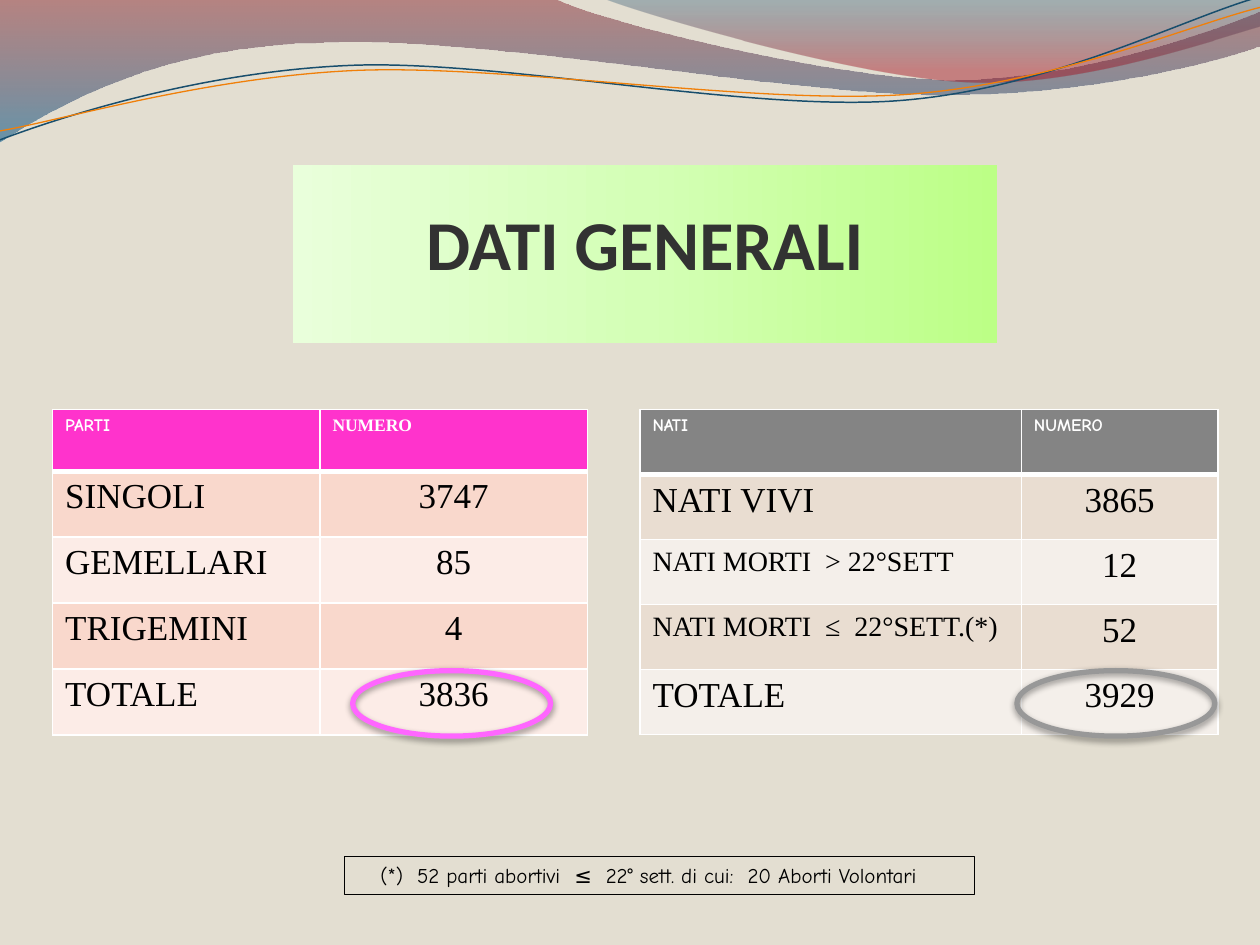
from math import cos, radians, sin

from lxml import etree
from pptx import Presentation
from pptx.dml.color import RGBColor
from pptx.enum.shapes import MSO_SHAPE
from pptx.enum.text import MSO_ANCHOR, PP_ALIGN
from pptx.oxml import parse_xml
from pptx.oxml.ns import nsdecls, qn
from pptx.util import Cm, Pt

RECT, OVAL = MSO_SHAPE.RECTANGLE, MSO_SHAPE.OVAL
BOTTOM, MIDDLE = MSO_ANCHOR.BOTTOM, MSO_ANCHOR.MIDDLE
LEFT, CENTER = PP_ALIGN.LEFT, PP_ALIGN.CENTER

SAND = RGBColor(0xE3, 0xDE, 0xD1)
WINE = RGBColor(0x7E, 0x16, 0x21)
BLUE = RGBColor(0x00, 0x56, 0x89)
NAVY = RGBColor(0x09, 0x44, 0x67)
RED = RGBColor(0xA1, 0x0F, 0x1F)
TEAL = RGBColor(0x18, 0x4E, 0x6D)
ORANGE = RGBColor(0xF0, 0x7F, 0x09)
LIME = RGBColor(0xBC, 0xFF, 0x86)
LIGHT_LIME = RGBColor(0xD4, 0xFF, 0xB6)
PALE_LIME = RGBColor(0xE9, 0xFF, 0xDB)
DARK = RGBColor(0x32, 0x32, 0x32)
BLACK = RGBColor(0x00, 0x00, 0x00)
WHITE = RGBColor(0xFF, 0xFF, 0xFF)
MAGENTA = RGBColor(0xFF, 0x33, 0xCC)
ROSE = RGBColor(0xF9, 0xD8, 0xCC)
PALE_ROSE = RGBColor(0xFC, 0xEC, 0xE7)
GREY = RGBColor(0x84, 0x84, 0x84)
BEIGE = RGBColor(0xE9, 0xDD, 0xD1)
PALE_BEIGE = RGBColor(0xF4, 0xEF, 0xEA)
PINK = RGBColor(0xFF, 0x66, 0xFF)
SILVER = RGBColor(0x98, 0x98, 0x98)

COMIC, TIMES = "Comic Neue", "Times New Roman"
TILT = 2.7


def set_gradient(sp, stops, angle):
    sp.fill.background()
    gs = "".join(
        f'<a:gs pos="{pos * 1000}"><a:srgbClr val="{color}">'
        f'<a:alpha val="{alpha * 1000}"/></a:srgbClr></a:gs>'
        for pos, color, alpha in stops)
    grad = parse_xml(
        f'<a:gradFill {nsdecls("a")} rotWithShape="1"><a:gsLst>{gs}</a:gsLst>'
        f'<a:lin ang="{angle * 60000}" scaled="0"/></a:gradFill>')
    no_fill = sp._element.spPr.find(qn("a:noFill"))
    sp._element.spPr.replace(no_fill, grad)


def set_font(r, name, size, color, bold=False):
    r.font.name = name
    r.font.size = Pt(size)
    r.font.color.rgb = color
    r.font.bold = bold


prs = Presentation()
prs.slide_width, prs.slide_height = Cm(25.4), Cm(19.05)
s = prs.slides.add_slide(prs.slide_layouts[6])
s.background.fill.solid()
s.background.fill.fore_color.rgb = SAND

waves = [
    ([(0, -0.03), (11.18, -0.03), (12.09, 0.43, 16.87, 1.6, 19.25, 1.6),
      (21.67, 1.6, 24.33, 0.66, 25.4, 0.23), (25.43, 0.91),
      (24.97, 1.12, 22.1, 1.93, 18.95, 1.91), (15.8, 1.91, 9.7, 0.71, 6.53, 0.86),
      (3.28, 0.89, 1.17, 2.11, -0.03, 2.87), (0, -0.03)],
     [(0, WINE, 45), (100, BLUE, 55)], None, 0, 0),
    ([(12.17, -0.03), (12.93, 0.28, 17.32, 1.57, 19.53, 1.65),
      (21.74, 1.75, 24.41, 0.81, 25.4, 0.53), (25.4, 0), (12.17, -0.03)],
     [(0, NAVY, 30), (80, RED, 45)], None, 0, 0),
    ([(0, 2.82), (1.22, 2.36, 4.01, 1.45, 7.04, 1.32),
      (10.03, 1.19, 15.06, 2.26, 18.11, 2.03), (21.16, 1.8, 23.83, 0.38, 25.35, -0.05)],
     None, TEAL, 0.85, 1.46),
    ([(0, 2.64), (1.19, 2.44, 4.17, 1.55, 7.19, 1.42),
      (10.24, 1.3, 15.16, 2.11, 18.21, 1.91), (21.23, 1.7, 23.9, 0.53, 25.4, 0.15)],
     None, ORANGE, 0.75, 1.5),
]
for segments, stops, color, width, mid_y in waves:
    angle = 0 if stops else radians(TILT)
    points = []
    for seg in segments:
        for x, y in zip(seg[::2], seg[1::2]):
            dx, dy = x - 12.69, y - mid_y
            points.append((Cm(12.69 + dx * cos(angle) - dy * sin(angle)),
                           Cm(mid_y + dx * sin(angle) + dy * cos(angle))))
    fb = s.shapes.build_freeform(*points[0])
    fb.add_line_segments(points[1:], close=stops is not None)
    sp = fb.convert_to_shape()
    lines = iter(list(sp._element.iter(qn("a:lnTo"))))
    for seg in segments[1:]:
        ln = next(lines)
        if len(seg) == 6:
            ln.tag = qn("a:cubicBezTo")
            for extra in (next(lines), next(lines)):
                ln.append(extra[0])
                extra.getparent().remove(extra)
    sp.shadow.inherit = False
    if stops:
        set_gradient(sp, stops, 90)
        sp.line.fill.background()
    else:
        sp.rotation = 360 - TILT
        sp.fill.background()
        sp.line.color.rgb = color
        sp.line.width = Pt(width)

sp = s.shapes.add_shape(RECT, Cm(5.9), Cm(3.33), Cm(14.2), Cm(3.59))
sp.shadow.inherit = False
set_gradient(sp, [(0, LIME, 100), (50, LIGHT_LIME, 100), (100, PALE_LIME, 100)], 180)
sp.line.fill.background()
tf = sp.text_frame
tf.word_wrap = True
tf.vertical_anchor = BOTTOM
tf.margin_left = tf.margin_right = 0
tf.margin_bottom = Cm(1.19)
tf.text = "DATI GENERALI"
p = tf.paragraphs[0]
p.alignment = CENTER
set_font(p.runs[0], "Calibri", 40, DARK, True)

tables = [
    (1.06, [5.39, 5.39], 1.25, 1.33, (COMIC, TIMES), (MAGENTA, ROSE, PALE_ROSE),
     [("PARTI", "NUMERO"), ("SINGOLI", "3747"), ("GEMELLARI", "85"),
      ("TRIGEMINI", "4"), ("TOTALE", "3836")]),
    (12.9, [7.69, 3.96], 1.32, 1.31, (COMIC, COMIC), (GREY, BEIGE, PALE_BEIGE),
     [("NATI", "NUMERO"), ("NATI VIVI", "3865"), ("NATI MORTI  > 22°SETT", "12"),
      ("NATI MORTI  ≤  22°SETT.(*)", "52"), ("TOTALE", "3929")]),
]
for left, widths, head_height, row_height, head_fonts, fills, rows in tables:
    height = head_height + 4 * row_height
    tbl = s.shapes.add_table(5, 2, Cm(left), Cm(8.25), Cm(sum(widths)), Cm(height)).table
    for j, width in enumerate(widths):
        tbl.columns[j].width = Cm(width)
    for i, row in enumerate(rows):
        tbl.rows[i].height = Cm(row_height if i else head_height)
        for j, text in enumerate(row):
            cell = tbl.cell(i, j)
            cell.fill.solid()
            cell.fill.fore_color.rgb = fills[0 if i == 0 else 2 - i % 2]
            cell.text = text
            p = cell.text_frame.paragraphs[0]
            p.alignment = CENTER if i and j else LEFT
            if i == 0:
                set_font(p.runs[0], head_fonts[j], 10, WHITE, True)
            else:
                set_font(p.runs[0], TIMES, 16 if "MORTI" in text else 20, BLACK)
            for k, side in enumerate(("lnL", "lnR", "lnT", "lnB")):
                thick = (i, side) in ((0, "lnB"), (1, "lnT"))
                ln = etree.Element(qn(f"a:{side}"), w=str(Pt(3 if thick else 1)))
                fill = etree.SubElement(ln, qn("a:solidFill"))
                etree.SubElement(fill, qn("a:srgbClr"), val=str(WHITE))
                cell._tc.get_or_add_tcPr().insert(k, ln)

sp = s.shapes.add_shape(RECT, Cm(6.95), Cm(17.27), Cm(12.7), Cm(0.76))
sp.shadow.inherit = False
sp.fill.background()
sp.line.color.rgb = BLACK
sp.line.width = Pt(0.75)
tf = sp.text_frame
tf.word_wrap = True
tf.vertical_anchor = MIDDLE
tf.margin_right = Cm(0.69)
tf.text = "(*)  52 parti abortivi  ≤  22° sett. di cui:  20 Aborti Volontari"
p = tf.paragraphs[0]
p.alignment = CENTER
set_font(p.runs[0], COMIC, 12, BLACK)

for left, color in ((7.11, PINK), (20.5, SILVER)):
    sp = s.shapes.add_shape(OVAL, Cm(left), Cm(13.52), Cm(3.99), Cm(1.32))
    sp.fill.background()
    sp.line.color.rgb = color
    sp.line.width = Pt(3)
    sp.shadow.inherit = False
    sp._element.spPr.find(qn("a:effectLst")).append(parse_xml(
        f'<a:outerShdw {nsdecls("a")} blurRad="{Pt(4)}" dist="{Pt(1.6)}" dir="5400000" '
        f'rotWithShape="0"><a:srgbClr val="{BLACK}"><a:alpha val="42000"/></a:srgbClr>'
        '</a:outerShdw>'))

prs.save("out.pptx")
